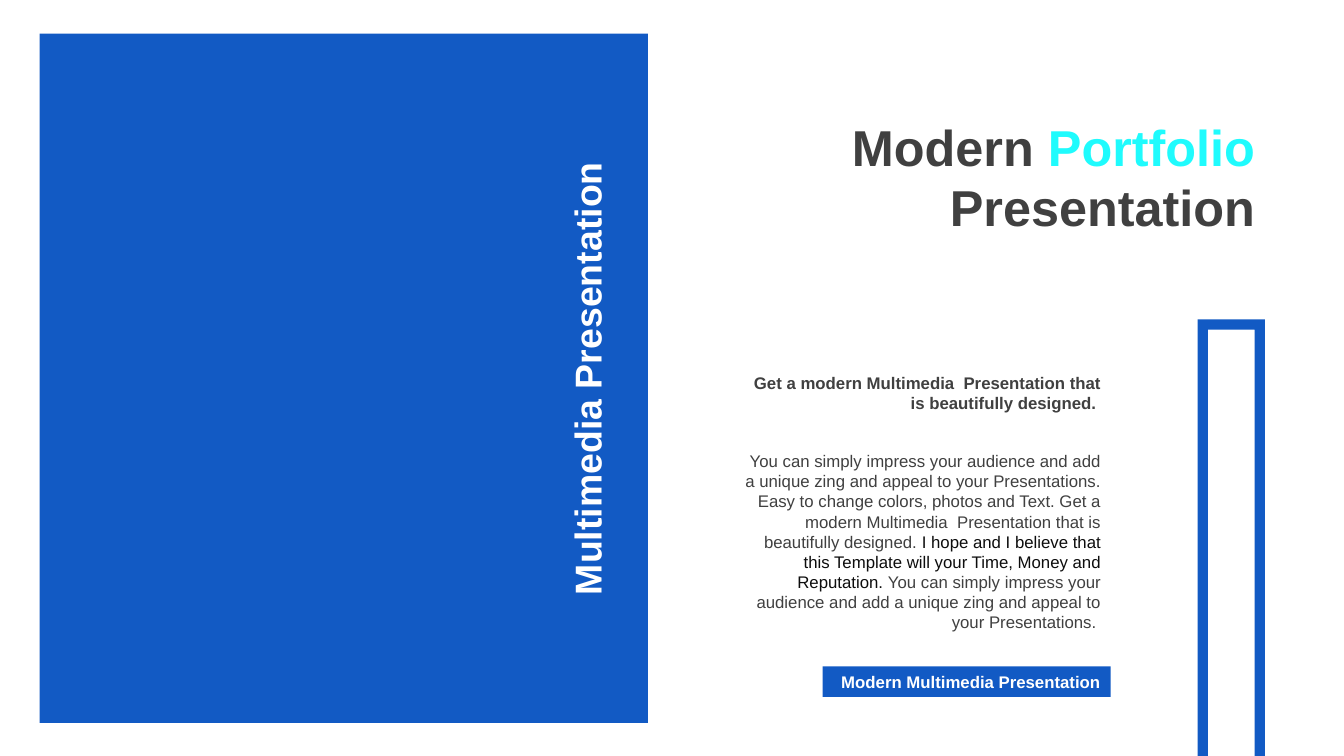
"""Builds the cover slide of a portfolio presentation."""
from pptx import Presentation
from pptx.dml.color import RGBColor
from pptx.enum.shapes import MSO_SHAPE
from pptx.enum.text import MSO_ANCHOR, PP_ALIGN
from pptx.util import Cm, Pt

RECT = MSO_SHAPE.RECTANGLE
TOP = MSO_ANCHOR.TOP
RIGHT, CENTER = PP_ALIGN.RIGHT, PP_ALIGN.CENTER
FONT = "Arial"
LINE_FACTOR = 1.2
SLIDE_W, SLIDE_H = 33.87, 19.05
COLORS = {
    "blue": "125AC4",
    "cyan": "1FFBFD",
    "dark": "404040",
    "black": "0D0D0D",
    "white": "FFFFFF",
}


def rgb(name):
    """Return a named colour."""
    return RGBColor.from_string(COLORS[name])


def paint(sp, color):
    """Give a shape a plain fill without line or shadow."""
    sp.shadow.inherit = False
    sp.fill.solid()
    sp.fill.fore_color.rgb = rgb(color)
    sp.line.fill.background()


def write(sp, runs, size, bold=False, align=RIGHT):
    """Fill a shape with one paragraph of (text, colour) runs."""
    tf = sp.text_frame
    tf.word_wrap = True
    tf.vertical_anchor = TOP
    tf.margin_left = tf.margin_right = Cm(0.25)
    tf.margin_top = tf.margin_bottom = Cm(0.13)
    p = tf.paragraphs[0]
    p.alignment = align
    p.line_spacing = Pt(size * LINE_FACTOR)
    for text, color in runs:
        r = p.add_run()
        r.text = text
        r.font.name = FONT
        r.font.size = Pt(size)
        r.font.bold = bold
        r.font.color.rgb = rgb(color)


def add_title(s, box, runs, size):
    """Place and format the title placeholder."""
    sp = s.shapes.title
    sp.left, sp.top, sp.width, sp.height = map(Cm, box)
    write(sp, runs, size, bold=True)


def add_text(s, box, runs, size, bold=False, align=RIGHT, rotation=0):
    """Add a text box."""
    sp = s.shapes.add_textbox(*map(Cm, box))
    sp.rotation = rotation
    write(sp, runs, size, bold, align)


def add_rect(s, box, color):
    """Add a filled rectangle and return it."""
    sp = s.shapes.add_shape(RECT, *map(Cm, box))
    paint(sp, color)
    return sp


def add_open_frame(s, left, top, right, bottom, bar, color):
    """Add a frame that is open at the bottom."""
    points = [
        (right, top), (right, bottom), (right - bar, bottom),
        (right - bar, top + bar), (left + bar, top + bar),
        (left + bar, bottom), (left, bottom),
    ]
    builder = s.shapes.build_freeform(Cm(left), Cm(top))
    builder.add_line_segments([(Cm(x), Cm(y)) for x, y in points], close=True)
    paint(builder.convert_to_shape(), color)


def main():
    """Build and save the slide."""
    prs = Presentation()
    prs.slide_width, prs.slide_height = Cm(SLIDE_W), Cm(SLIDE_H)
    s = prs.slides.add_slide(prs.slide_layouts[5])

    add_rect(s, (1, 0.85, 15.33, 17.37), "blue")
    add_title(s, (19.43, 2.79, 12.45, 3.33), [
        ("Modern ", "dark"),
        ("Portfolio ", "cyan"),
        ("Presentation", "dark"),
    ], 36)
    add_text(s, (18.42, 11.23, 9.58, 4.88), [
        ("You can simply impress your audience and add a unique zing and "
         "appeal to your Presentations. Easy to change colors, photos and "
         "Text. Get a modern Multimedia  Presentation that is beautifully "
         "designed.", "dark"),
        (" I hope and I believe that this Template will your Time, Money "
         "and Reputation. ", "black"),
        ("You can simply impress your audience and add a unique zing and "
         "appeal to your Presentations. ", "dark"),
    ], 12)
    add_text(s, (18.42, 9.27, 9.58, 1.27), [
        ("Get a modern Multimedia  Presentation that is beautifully "
         "designed. ", "dark"),
    ], 12, bold=True)
    label = add_rect(s, (20.73, 16.79, 7.26, 0.77), "blue")
    write(label, [("Modern Multimedia Presentation", "white")], 12, bold=True)
    add_text(s, (8.59, 8.84, 12.4, 1.4),
             [("Multimedia Presentation", "white")],
             26.7, bold=True, align=CENTER, rotation=270)
    add_open_frame(s, 30.18, 8.05, 31.88, SLIDE_H, 0.26, "blue")

    prs.save("out.pptx")


if __name__ == "__main__":
    main()
